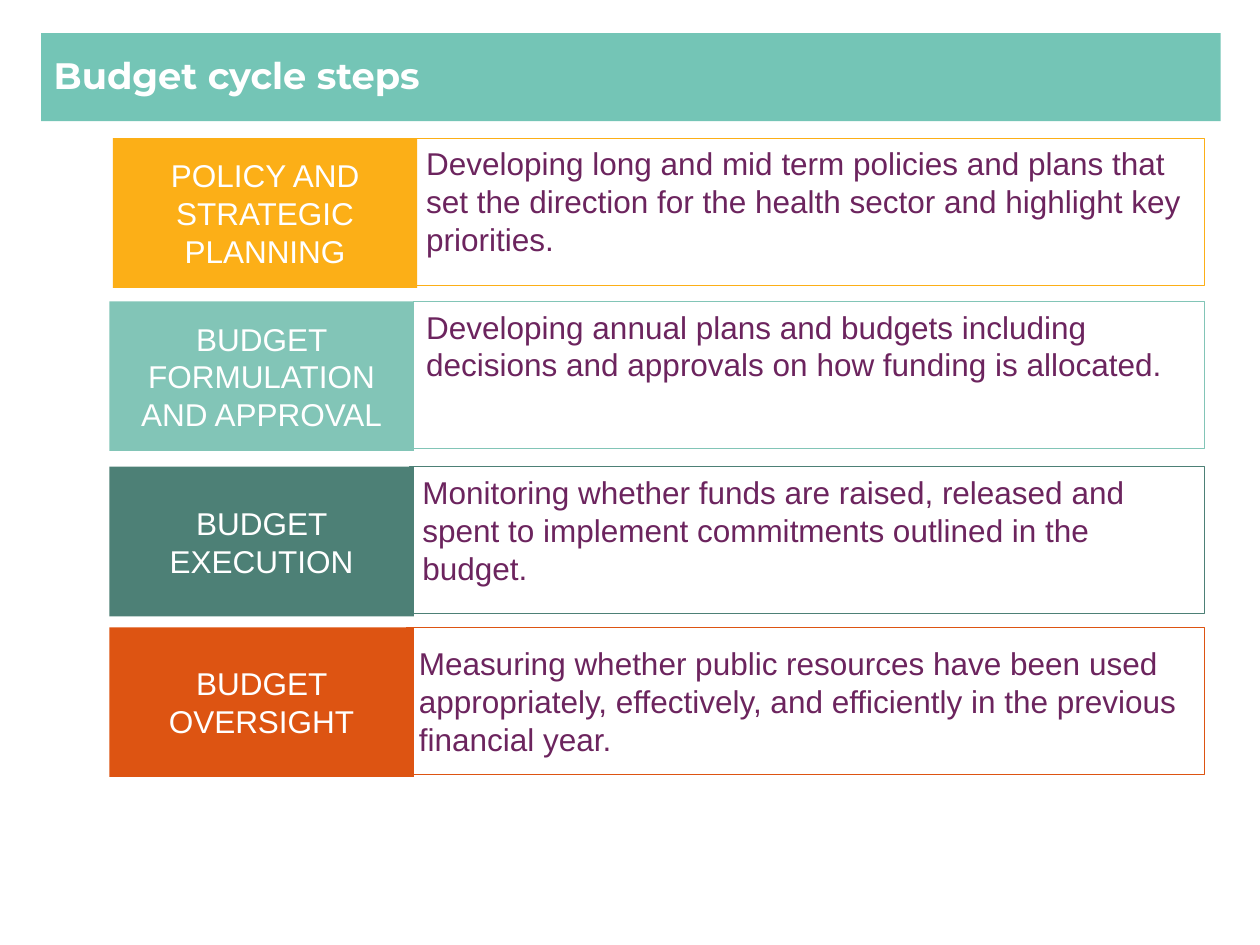
"""Build the slide that explains the four steps of the budget cycle."""
from pptx import Presentation
from pptx.dml.color import RGBColor
from pptx.enum.shapes import MSO_SHAPE
from pptx.enum.text import MSO_ANCHOR, MSO_AUTO_SIZE, PP_ALIGN
from pptx.util import Pt

RECTANGLE = MSO_SHAPE.RECTANGLE
TOP, MIDDLE = MSO_ANCHOR.TOP, MSO_ANCHOR.MIDDLE
LEFT, CENTER = PP_ALIGN.LEFT, PP_ALIGN.CENTER
FIXED_SIZE = MSO_AUTO_SIZE.NONE

WHITE = RGBColor(0xFF, 0xFF, 0xFF)
PLUM = RGBColor(0x6C, 0x24, 0x5E)
TEAL = RGBColor(0x74, 0xC5, 0xB6)
AMBER = RGBColor(0xFC, 0xAF, 0x17)
SEAFOAM = RGBColor(0x82, 0xC5, 0xB7)
PINE = RGBColor(0x4D, 0x80, 0x76)
RUST = RGBColor(0xDD, 0x54, 0x12)

LABEL_WIDTH, LABEL_HEIGHT = 174, 85.5
PANEL_RIGHT, PANEL_HEIGHT = 688.5, 84

STEPS = [
    ("POLICY AND STRATEGIC PLANNING",
     "Developing long and mid term policies and plans that set the direction "
     "for the health sector and highlight key priorities.",
     AMBER, 79, 64.5, 236.5, TOP),
    ("BUDGET FORMULATION AND APPROVAL",
     "Developing annual plans and budgets including decisions and approvals "
     "on how funding is allocated.",
     SEAFOAM, 172.25, 62.5, 236.5, TOP),
    ("BUDGET EXECUTION",
     "Monitoring whether funds are raised, released and spent to implement "
     "commitments outlined in the budget.",
     PINE, 266.75, 62.5, 234.25, TOP),
    ("BUDGET OVERSIGHT",
     "Measuring whether public resources have been used appropriately, "
     "effectively, and efficiently in the previous financial year.",
     RUST, 358.5, 62.5, 232.25, MIDDLE),
]


class BudgetSlide:
    """Hold the text style and the slide being built."""

    font_name = "Arial"
    font_size = 18

    def __init__(self, slide):
        self.slide = slide

    def add_text(self, shape, text, color, align, anchor):
        """Put one paragraph into a shape and return its run."""
        frame = shape.text_frame
        frame.word_wrap = True
        frame.auto_size = FIXED_SIZE
        frame.vertical_anchor = anchor
        paragraph = frame.paragraphs[0]
        paragraph.alignment = align
        run = paragraph.add_run()
        run.text = text
        run.font.name = self.font_name
        run.font.size = Pt(self.font_size)
        run.font.color.rgb = color
        return run

    def title(self, text):
        """Turn the title placeholder into the banner."""
        banner = self.slide.shapes.title
        banner.left, banner.top = Pt(23.5), Pt(19)
        banner.width, banner.height = Pt(674), Pt(50.25)
        banner.fill.solid()
        banner.fill.fore_color.rgb = TEAL
        heading = self.add_text(banner, text, WHITE, LEFT, MIDDLE)
        heading.font.name = "Montserrat"
        heading.font.size = Pt(21)
        heading.font.bold = True
        banner.text_frame.paragraphs[0].line_spacing = 0.9

    def box(self, left, top, width, height):
        """Add a plain rectangle without a shadow."""
        box = self.slide.shapes.add_shape(
            RECTANGLE, Pt(left), Pt(top), Pt(width), Pt(height))
        box.shadow.inherit = False
        return box

    def label(self, text, color, left, top):
        """Add the coloured name of a step."""
        label = self.box(left, top, LABEL_WIDTH, LABEL_HEIGHT)
        label.fill.solid()
        label.fill.fore_color.rgb = color
        label.line.fill.background()
        self.add_text(label, text, WHITE, CENTER, MIDDLE)

    def panel(self, text, color, left, top, anchor):
        """Add the outlined description of a step."""
        panel = self.box(left, top, PANEL_RIGHT - left, PANEL_HEIGHT)
        panel.fill.background()
        panel.line.color.rgb = color
        panel.line.width = Pt(0.75)
        self.add_text(panel, text, PLUM, LEFT, anchor)


def main():
    """Build and save the presentation."""
    deck = Presentation()
    deck.slide_width, deck.slide_height = Pt(720), Pt(540)
    budget = BudgetSlide(deck.slides.add_slide(deck.slide_layouts[5]))
    budget.title("Budget cycle steps")
    for name, description, color, top, label_left, panel_left, anchor in STEPS:
        budget.label(name, color, label_left, top)
        budget.panel(description, color, panel_left, top, anchor)
    deck.save("out.pptx")


if __name__ == "__main__":
    main()
